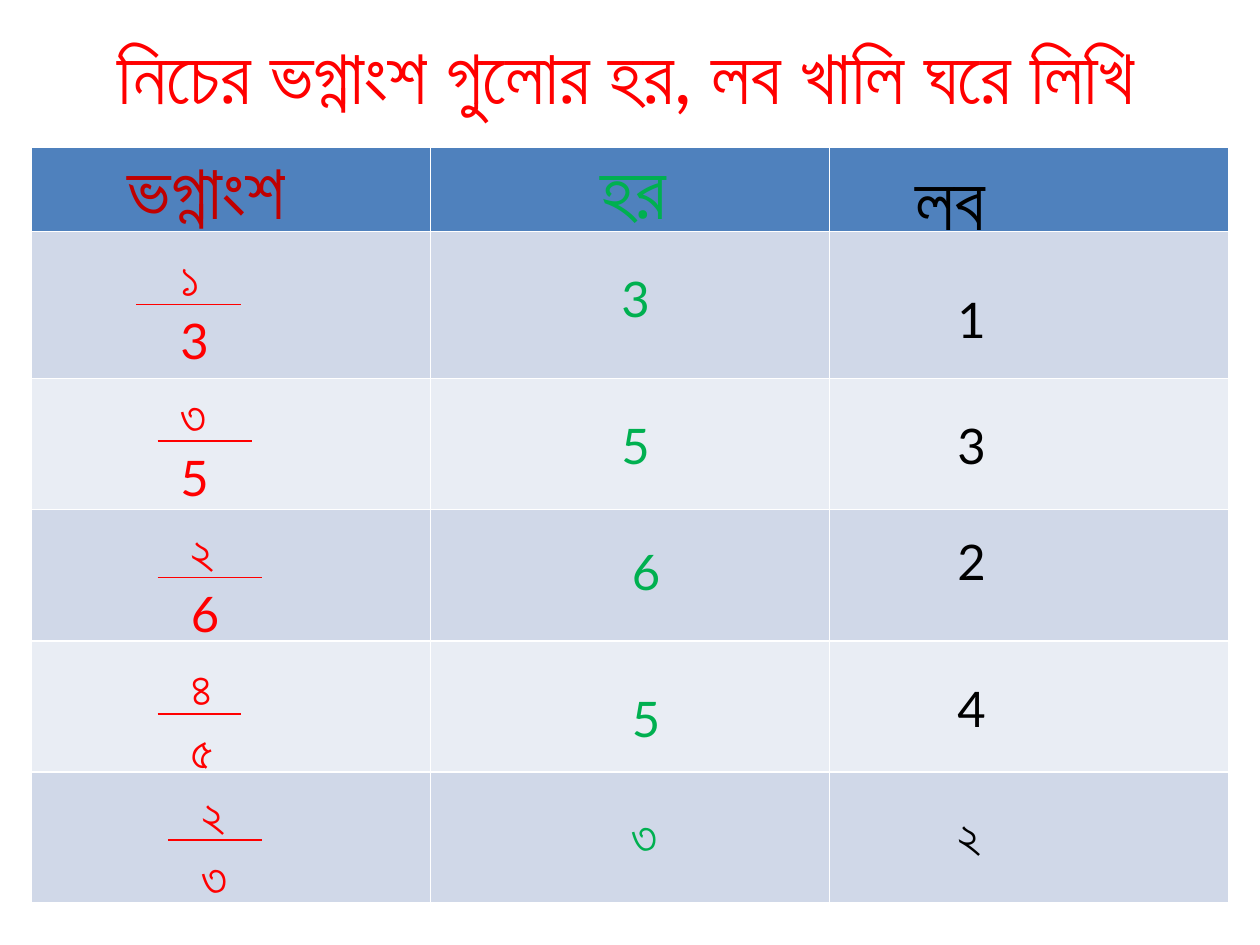
import pptx
import pptx.util
import pptx.dml.color
import pptx.enum.shapes
import pptx.enum.text
import pptx.oxml.ns
import lxml.etree

INK = {"red": "FF0000", "dark": "C00000", "green": "00B050", "black": "000000",
       "head": "4F81BD", "odd": "D0D8E8", "even": "E9EDF4"}
FONT = "Lato"
TITLE = "নিচের ভগ্নাংশ গুলোর হর, লব খালি ঘরে লিখি"
ROWS = [0.67, 1.17] + [1.04] * 4

# Places are counted in twelfths of an inch.
HEADS = [("ভগ্নাংশ", 11, 13, 1.51, "dark"), ("হর", 56, 13, 0.74, "green"),
         ("লব", 86, 14, 0.8, "black")]
# top, bottom, text column, text row, line start, line end
FRACS = [("১", "3", 16, 23, 13, 23), ("৩", "5", 16, 36, 15, 24),
         ("২", "6", 17, 49, 15, 25), ("৪", "৫", 17, 62, 15, 23),
         ("২", "৩", 18, 74, 16, 25)]
LOWS = [("3", 58, 25), ("5", 58, 39), ("6", 59, 51), ("5", 59, 65), ("৩", 59, 76)]
TOPS = [("1", 90, 27), ("3", 90, 39), ("2", 90, 50), ("4", 90, 64), ("২", 90, 76)]


def unit(n):
    return pptx.util.Inches(n / 12)


def shade(name):
    return pptx.dml.color.RGBColor.from_string(INK[name])


def write(text, col, row, wide=0.4, size=28, ink="red", box=None):
    high = pptx.util.Inches(0.84 if size > 28 else 0.57)
    if box is None:
        box = slide.shapes.add_textbox(0, 0, 0, 0)
    box.left, box.top = unit(col), unit(row)
    box.width, box.height = pptx.util.Inches(wide), high
    frame = box.text_frame
    frame.word_wrap = True
    frame.auto_size = pptx.enum.text.MSO_AUTO_SIZE.NONE
    frame.vertical_anchor = pptx.enum.text.MSO_ANCHOR.TOP
    para = frame.paragraphs[0]
    para.alignment = pptx.enum.text.PP_ALIGN.LEFT
    run = para.add_run()
    run.text = text
    run.font.name = FONT
    run.font.size = pptx.util.Pt(size)
    run.font.color.rgb = shade(ink)


def rule(start, end, row):
    line = slide.shapes.add_connector(
        pptx.enum.shapes.MSO_CONNECTOR.STRAIGHT,
        unit(start), unit(row), unit(end), unit(row))
    line.line.color.rgb = shade("red")
    line.line.width = pptx.util.Pt(0.75)
    lxml.etree.SubElement(line._element.spPr, pptx.oxml.ns.qn("a:effectLst"))


deck = pptx.Presentation()
deck.slide_width, deck.slide_height = pptx.util.Inches(10), pptx.util.Inches(7.5)
slide = deck.slides.add_slide(deck.slide_layouts[5])
write(TITLE, 10, 2, wide=8.72, size=44, box=slide.shapes.title)

grid = slide.shapes.add_table(len(ROWS), len(HEADS), unit(3), unit(14),
                              pptx.util.Inches(9.5), pptx.util.Inches(6)).table
for r, high in enumerate(ROWS):
    grid.rows[r].height = pptx.util.Inches(high)
    tone = "head" if r == 0 else ("odd" if r % 2 else "even")
    for cell in grid.rows[r].cells:
        cell.fill.solid()
        cell.fill.fore_color.rgb = shade(tone)

for text, col, row, wide, ink in HEADS:
    write(text, col, row, wide=wide, size=44, ink=ink)

for top, low, col, row, start, end in FRACS:
    write(top, col, row)
    rule(start, end, row + 6)
    write(low, col, row + 6)

for items, ink in ((LOWS, "green"), (TOPS, "black")):
    for text, col, row in items:
        write(text, col, row, wide=0.35, ink=ink)

deck.save("out.pptx")
